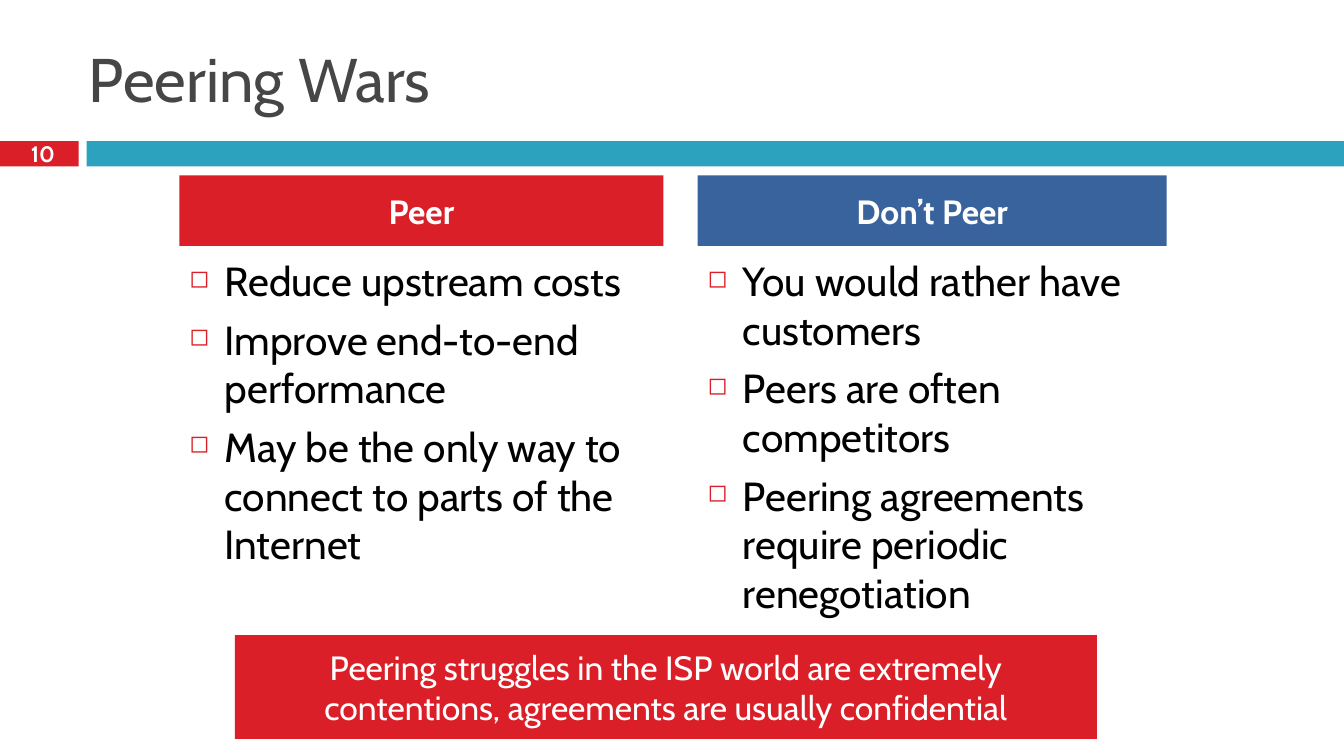
from pptx import Presentation
from pptx.dml.color import RGBColor
from pptx.enum import shapes, text
from pptx.oxml import parse_xml
from pptx.oxml.ns import nsdecls
from pptx.util import Pt

RED = RGBColor(0xDA, 0x1F, 0x28)
TEAL = RGBColor(0x2D, 0xA2, 0xBF)
BLUE = RGBColor(0x39, 0x63, 0x9D)
GREY = RGBColor(0x46, 0x46, 0x46)
BLACK = RGBColor(0, 0, 0)
WHITE = RGBColor(255, 255, 255)
FONT = "Cabin"
PX = 9144

TITLE = "Peering Wars"
PAGE = "10"
NOTE = ("Peering struggles in the ISP world are extremely contentions, "
        "agreements are usually confidential")
SIDES = [
    dict(head="Peer", left=178, width=480, high=392, fill=RED, items=[
        "Reduce upstream costs",
        "Improve end-to-end performance",
        "May be the only way to connect to parts of the Internet"]),
    dict(head="Don’t Peer", left=692, width=465, high=436, fill=BLUE, items=[
        "You would rather have customers",
        "Peers are often competitors",
        "Peering agreements require periodic renegotiation"]),
]
BARS = [((0, 140, 78, 25), RED), ((86, 140, 1247, 25), TEAL)]


def scale(*nums):
    return [n * PX for n in nums]


def mark(para):
    props = para._p.get_or_add_pPr()
    props.set("marL", str(35 * PX))
    props.set("indent", str(-35 * PX))
    for tag in (f'<a:buClr {nsdecls("a")}><a:srgbClr val="{RED}"/></a:buClr>',
                f'<a:buSzPct {nsdecls("a")} val="60000"/>',
                f'<a:buChar {nsdecls("a")} char="◻"/>'):
        props.append(parse_xml(tag))


def write(shape, *lines, size=24, color=WHITE, bold=False, gap=0,
          align=text.PP_ALIGN.CENTER, anchor=text.MSO_ANCHOR.MIDDLE,
          bullet=False):
    frame = shape.text_frame
    frame.word_wrap = True
    frame.auto_size = text.MSO_AUTO_SIZE.NONE
    frame.vertical_anchor = anchor
    frame.text = "\n".join(lines)
    for para in frame.paragraphs:
        para.alignment = align
        para.space_before = Pt(gap)
        font = para.runs[0].font
        font.name, font.size, font.bold = FONT, Pt(size), bold
        font.color.rgb = color
        if bullet:
            mark(para)


def block(slide, box, fill):
    shape = slide.shapes.add_shape(shapes.MSO_SHAPE.RECTANGLE, *scale(*box))
    shape.shadow.inherit = False
    shape.fill.solid()
    shape.fill.fore_color.rgb = fill
    shape.line.fill.background()
    return shape


def label(slide, box):
    return slide.shapes.add_textbox(*scale(*box))


def main():
    """Build the slide and save it."""
    deck = Presentation()
    deck.slide_width, deck.slide_height = scale(1333, 750)
    slide = deck.slides.add_slide(deck.slide_layouts[5])
    left = text.PP_ALIGN.LEFT
    title = slide.shapes.title
    title.left, title.top, title.width, title.height = scale(78, 30, 1189, 95)
    write(title, TITLE, size=44, color=GREY, align=left)
    for box, fill in BARS:
        block(slide, box, fill)
    write(label(slide, (-1, 138, 87, 29)), PAGE, size=16, bold=True)
    for side in SIDES:
        x, wide = side["left"], side["width"]
        write(label(slide, (x, 249, wide, side["high"])), *side["items"],
              size=29, color=BLACK, gap=7, align=left,
              anchor=text.MSO_ANCHOR.TOP, bullet=True)
        write(block(slide, (x, 174, wide, 70), side["fill"]), side["head"],
              bold=True, gap=7)
    write(block(slide, (233, 630, 855, 103), RED), NOTE, gap=7)
    deck.save("out.pptx")


if __name__ == "__main__":
    main()
